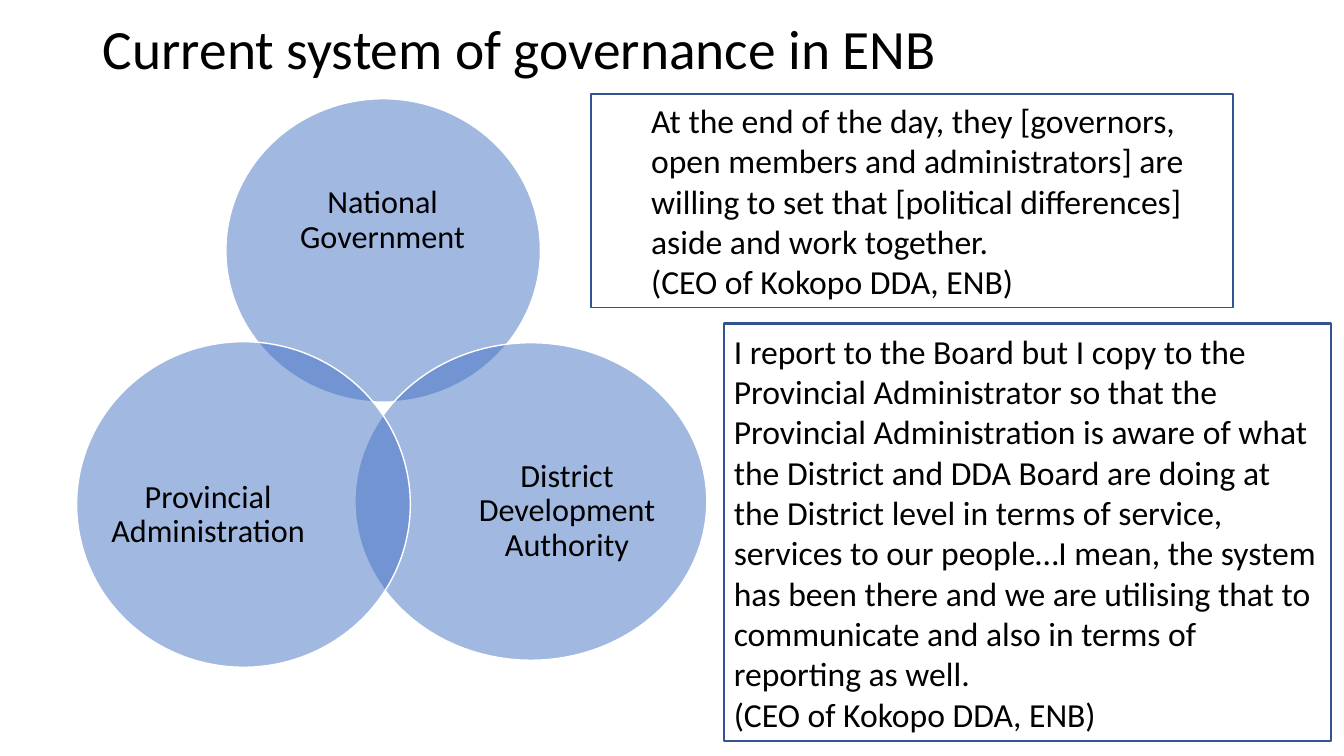
from pptx import Presentation
from pptx.dml.color import RGBColor
from pptx.enum.shapes import MSO_SHAPE
from pptx.enum.text import MSO_ANCHOR, PP_ALIGN
from pptx.oxml.ns import qn
from pptx.util import Inches, Pt
from lxml import etree

OVAL, RECT = MSO_SHAPE.OVAL, MSO_SHAPE.RECTANGLE
MIDDLE = MSO_ANCHOR.MIDDLE
LEFT, CENTER = PP_ALIGN.LEFT, PP_ALIGN.CENTER
BLUE, NAVY, WHITE, BLACK = "4472C4", "325491", "FFFFFF", "000000"


def rgb(color):
    return RGBColor.from_string(color)


def write(tf, lines, size, align, spacing=1.0):
    """Fill a text frame with one paragraph per line and return the paragraphs."""
    tf.word_wrap = True
    tf.vertical_anchor = MIDDLE
    tf.text = "\n".join(lines)
    for p in tf.paragraphs:
        p.alignment = align
        p.line_spacing = spacing
        font = p.runs[0].font
        for name, value in {"name": "Calibri", "size": Pt(size)}.items():
            setattr(font, name, value)
        font.color.rgb = rgb(BLACK)
    return tf.paragraphs


prs = Presentation()
prs.slide_width, prs.slide_height = Inches(13.33), Inches(7.5)
s = prs.slides.add_slide(prs.slide_layouts[5])

title = s.shapes.title
title.left, title.top = Inches(0.92), Inches(0.2)
title.width, title.height = Inches(11.5), Inches(0.62)
write(title.text_frame, ["Current system of governance in ENB"], 39.6, LEFT, 0.9)

# Venn diagram: circle box, label box, label
venn = [
    ((2.24, 0.98, 3.12, 3.01), (2.65, 1.51, 2.29, 1.35), "National Government"),
    ((3.52, 3.4, 3.49, 3.15), (4.58, 4.21, 2.09, 1.73), "District Development Authority"),
    ((0.76, 3.39, 3.31, 3.23), (1.07, 4.22, 1.99, 1.78), "Provincial Administration"),
]
for circle_box, label_box, label in venn:
    sp = s.shapes.add_shape(OVAL, *map(Inches, circle_box))
    sp.shadow.inherit = False
    sp.fill.solid()
    sp.fill.fore_color.rgb = rgb(BLUE)
    color = sp.fill._xPr.find(qn("a:solidFill"))[0]
    etree.SubElement(color, qn("a:alpha")).set("val", "50000")
    sp.line.color.rgb = rgb(WHITE)
    sp.line.width = Pt(1)

    tf = s.shapes.add_textbox(*map(Inches, label_box)).text_frame
    for side in ("left", "top", "right", "bottom"):
        setattr(tf, f"margin_{side}", 0)
    write(tf, [label], 23, CENTER, 0.9)

# Quotes: box, fill, line width, indent, words
SPEAKER = "(CEO of Kokopo DDA, ENB)"
quotes = [
    ((7.18, 3.21, 6.02, 4.14), WHITE, 1.5, 0,
     "I report to the Board but I copy to the Provincial Administrator so that the "
     "Provincial Administration is aware of what the District and DDA Board are doing at "
     "the District level in terms of service, services to our people…I mean, the system "
     "has been there and we are utilising that to communicate and also in terms of "
     "reporting as well."),
    ((5.86, 0.93, 6.37, 2.12), None, 1.25, 0.5,
     "At the end of the day, they [governors, open members and administrators] are "
     "willing to set that [political differences] aside and work together."),
]
for box, fill, line_width, indent, words in quotes:
    sp = s.shapes.add_shape(RECT, *map(Inches, box))
    sp.shadow.inherit = False
    if fill:
        sp.fill.solid()
        sp.fill.fore_color.rgb = rgb(fill)
    else:
        sp.fill.background()
    sp.line.color.rgb = rgb(NAVY)
    sp.line.width = Pt(line_width)
    for p in write(sp.text_frame, [words, SPEAKER], 24, LEFT):
        if indent:
            p.level = 1
            p._p.get_or_add_pPr().set("marL", str(Inches(indent)))

prs.save("out.pptx")
